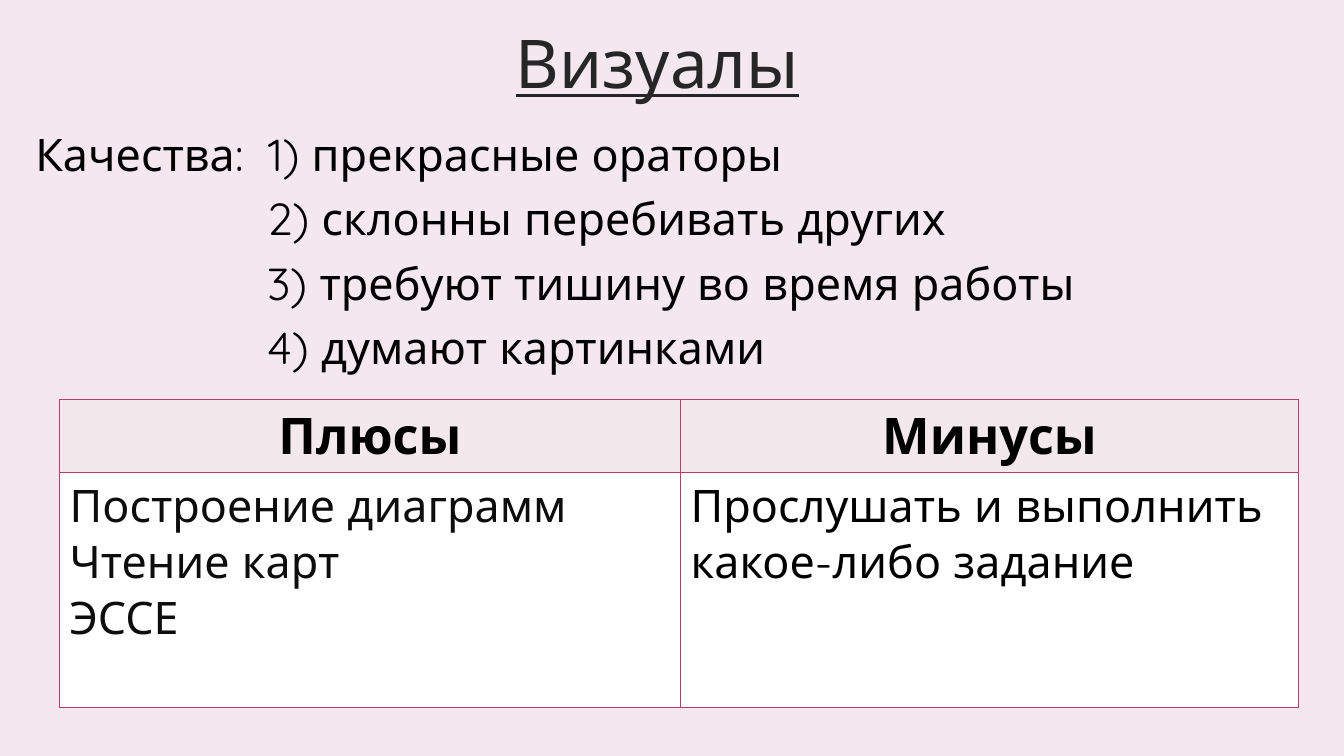
from lxml import etree
from pptx import Presentation, util as u
from pptx.dml.color import RGBColor
from pptx.enum import text
from pptx.oxml.ns import qn

FONT = "Quicksand"
COLORS = {
    "background": "F4E7ED",
    "title": "262626",
    "ink": "000000",
    "pros": "0D0D0D",
    "border": "B83D68",
    "header": "F3E8EB",
    "cell": "FFFFFF",
}
QUALITIES = [
    "Качества:  1) прекрасные ораторы",
    "2) склонны перебивать других",
    "3) требуют тишину во время работы",
    "4) думают картинками",
]
# Each column: heading, lines, text colour
COLUMNS = [
    ("Плюсы", ["Построение диаграмм", "Чтение карт", "ЭССЕ"], "pros"),
    ("Минусы", ["Прослушать и выполнить какое-либо задание"], "ink"),
]


def rgb(name):
    return RGBColor.from_string(COLORS[name])


def place(shape, box):
    shape.left, shape.top, shape.width, shape.height = map(u.Inches, box)


def write_lines(text_frame, lines, size, color, bold=False, underline=False,
                align=text.PP_ALIGN.LEFT):
    text_frame.text = "\n".join(lines)
    for paragraph in text_frame.paragraphs:
        paragraph.alignment = align
        for run in paragraph.runs:
            font = run.font
            font.name, font.size = FONT, u.Pt(size)
            font.bold, font.underline = bold, underline
            font.color.rgb = rgb(color)


def add_title(slide, box):
    title = slide.shapes.title
    place(title, box)
    frame = title.text_frame
    write_lines(frame, ["Визуалы"], 48, "title", underline=True,
                align=text.PP_ALIGN.CENTER)
    frame.auto_size = text.MSO_AUTO_SIZE.NONE
    frame.vertical_anchor = text.MSO_ANCHOR.MIDDLE
    frame.paragraphs[0].line_spacing = 0.9


def add_qualities(slide, box):
    body = slide.placeholders[1]
    place(body, box)
    frame = body.text_frame
    frame.auto_size = text.MSO_AUTO_SIZE.NONE
    frame.vertical_anchor = text.MSO_ANCHOR.TOP
    write_lines(frame, QUALITIES, 32, "ink")
    # The label hangs to the left of the numbered items
    hang = u.Inches(2.3)
    for index, paragraph in enumerate(frame.paragraphs):
        paragraph.line_spacing = 1.0
        paragraph.space_before = u.Pt(7.4)
        properties = paragraph._p.get_or_add_pPr()
        properties.set("marL", str(hang))
        properties.set("indent", str(0 if index else -hang))
        etree.SubElement(properties, qn("a:buNone"))


def style_cell(cell, fill):
    properties = cell._tc.get_or_add_tcPr()
    for side in ("lnL", "lnR", "lnT", "lnB"):
        line = etree.SubElement(properties, qn(f"a:{side}"), w=str(u.Pt(1)))
        solid = etree.SubElement(line, qn("a:solidFill"))
        etree.SubElement(solid, qn("a:srgbClr"), val=COLORS["border"])
    cell.fill.solid()
    cell.fill.fore_color.rgb = rgb(fill)


def add_comparison(slide, box):
    table = slide.shapes.add_table(2, len(COLUMNS), *map(u.Inches, box)).table
    for column, width in zip(table.columns, (6.16, 6.13)):
        column.width = u.Inches(width)
    header_height = 0.72
    table.rows[0].height = u.Inches(header_height)
    table.rows[1].height = u.Inches(box[3] - header_height)
    for index, (heading, lines, color) in enumerate(COLUMNS):
        header, cell = table.cell(0, index), table.cell(1, index)
        write_lines(header.text_frame, [heading], 36, "ink", bold=True,
                    align=text.PP_ALIGN.CENTER)
        write_lines(cell.text_frame, lines, 32, color)
        style_cell(header, "header")
        style_cell(cell, "cell")


def main():
    presentation = Presentation()
    presentation.slide_width = u.Inches(13.33)
    presentation.slide_height = u.Inches(7.5)
    slide = presentation.slides.add_slide(presentation.slide_layouts[1])
    slide.background.fill.solid()
    slide.background.fill.fore_color.rgb = rgb("background")

    add_title(slide, (1.02, 0.24, 11, 0.85))
    add_qualities(slide, (0.25, 1.21, 11.91, 5.39))
    add_comparison(slide, (0.59, 3.96, 12.29, 3.05))
    presentation.save("out.pptx")


if __name__ == "__main__":
    main()
